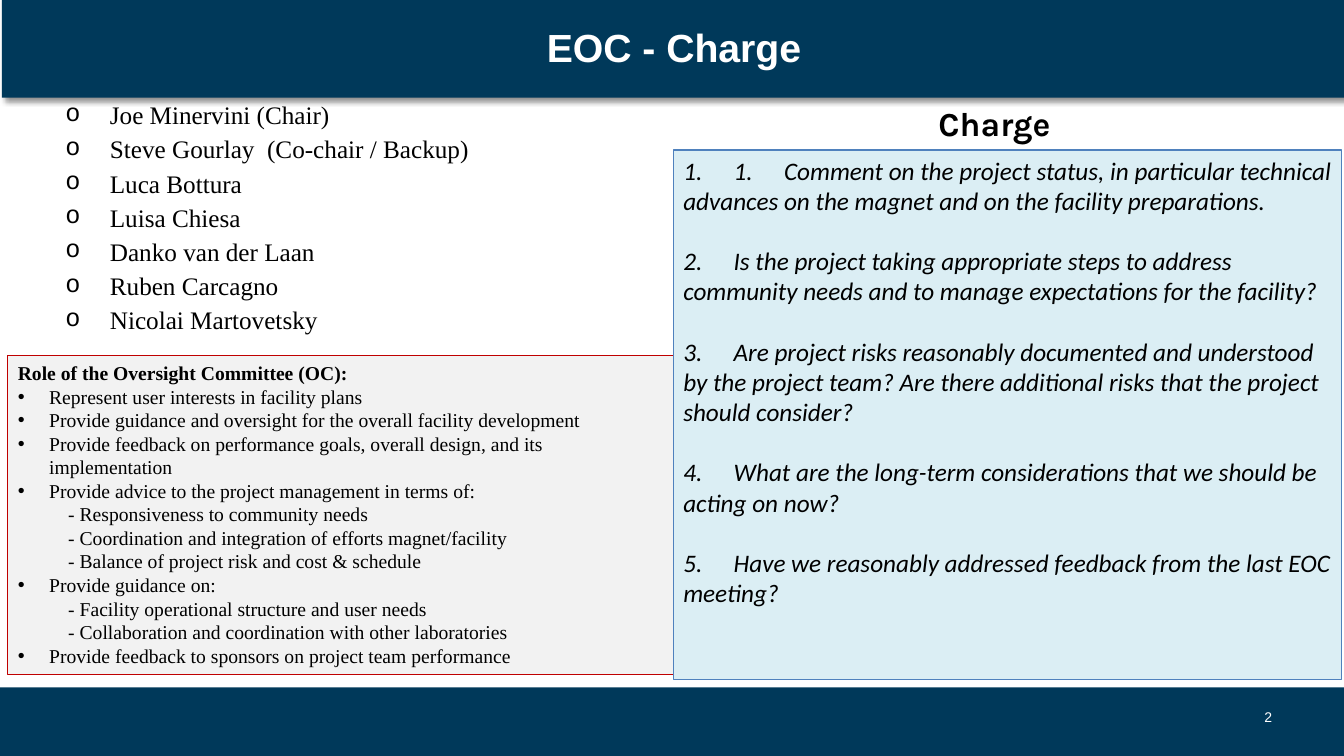
from dataclasses import dataclass

from lxml import etree
from pptx import Presentation
from pptx.dml.color import RGBColor
from pptx.enum.shapes import MSO_SHAPE
from pptx.enum.text import MSO_ANCHOR, MSO_AUTO_SIZE, PP_ALIGN
from pptx.oxml.ns import qn
from pptx.util import Cm, Pt

RECTANGLE = MSO_SHAPE.RECTANGLE
TOP, MIDDLE = MSO_ANCHOR.TOP, MSO_ANCHOR.MIDDLE
LEFT, CENTER, RIGHT = PP_ALIGN.LEFT, PP_ALIGN.CENTER, PP_ALIGN.RIGHT
TITLE_ONLY = 5


@dataclass(frozen=True)
class Style:
    font: str
    size: float
    color: str = "000000"
    bold: bool = False
    italic: bool = False
    leading: float = 0


@dataclass(frozen=True)
class Theme:
    navy: str = "00395A"
    role_fill: str = "F2F2F2"
    role_line: str = "C00000"
    charge_fill: str = "DBEEF4"
    charge_line: str = "4F81BD"
    title: Style = Style("Arial", 28, "FFFFFF", bold=True)
    member: Style = Style("Times New Roman", 18, leading=19.4)
    role_heading: Style = Style("Times New Roman", 14, bold=True, leading=16.8)
    role: Style = Style("Times New Roman", 14, leading=16.8)
    heading: Style = Style("Karla", 24, bold=True)
    charge: Style = Style("Calibri", 18, italic=True, leading=21.55)
    number: Style = Style("Arial", 10, "FFFFFF")


THEME = Theme()

MEMBERS = [
    "Joe Minervini (Chair)",
    "Steve Gourlay  (Co-chair / Backup)",
    "Luca Bottura",
    "Luisa Chiesa",
    "Danko van der Laan",
    "Ruben Carcagno",
    "Nicolai Martovetsky",
]
ROLE_HEADING = "Role of the Oversight Committee (OC):"
ROLES = [
    ("Represent user interests in facility plans", []),
    ("Provide guidance and oversight for the overall facility development", []),
    ("Provide feedback on performance goals, overall design, and its implementation", []),
    ("Provide advice to the project management in terms of:", [
        "Responsiveness to community needs",
        "Coordination and integration of efforts magnet/facility",
        "Balance of project risk and cost & schedule",
    ]),
    ("Provide guidance on:", [
        "Facility operational structure and user needs",
        "Collaboration and coordination with other laboratories",
    ]),
    ("Provide feedback to sponsors on project team performance", []),
]
CHARGES = [
    "1.\t1.\tComment on the project status, in particular technical advances "
    "on the magnet and on the facility preparations.",
    "2.\tIs the project taking appropriate steps to address community needs "
    "and to manage expectations for the facility?",
    "3.\tAre project risks reasonably documented and understood by the project "
    "team? Are there additional risks that the project should consider?",
    "4.\tWhat are the long-term considerations that we should be acting on now?",
    "5.\tHave we reasonably addressed feedback from the last EOC meeting?",
]


def place(shape, left, top, width, height):
    shape.left, shape.top = Cm(left), Cm(top)
    shape.width, shape.height = Cm(width), Cm(height)


def paint(shape, fill, line=None, line_width=1):
    shape.fill.solid()
    shape.fill.fore_color.rgb = RGBColor.from_string(fill)
    if line:
        shape.line.color.rgb = RGBColor.from_string(line)
        shape.line.width = Pt(line_width)
    else:
        shape.line.fill.background()


def prepare_frame(shape, anchor=TOP, side=0.13, wrap=True):
    frame = shape.text_frame
    frame.auto_size = MSO_AUTO_SIZE.NONE
    frame.word_wrap = wrap
    frame.vertical_anchor = anchor
    frame.margin_left = frame.margin_right = Cm(side)
    frame.margin_top = frame.margin_bottom = Cm(0.13)
    return frame


def add_panel(page, bounds, fill, line=None, line_width=1):
    panel = page.shapes.add_shape(RECTANGLE, *map(Cm, bounds))
    panel.shadow.inherit = False
    paint(panel, fill, line, line_width)
    return prepare_frame(panel, side=0.25)


def add_text_box(page, bounds, anchor=TOP, wrap=True):
    box = page.shapes.add_textbox(*map(Cm, bounds))
    return prepare_frame(box, anchor, wrap=wrap)


def add_para(frame, text, style, align=LEFT, before=0, bullet=None,
             margin=0, hanging=0, tabs=()):
    """Write into the empty first paragraph, or append one with space before."""
    first = frame.paragraphs[0]
    is_first = not first.text
    para = first if is_first else frame.add_paragraph()
    para.text = text
    para.alignment = align
    properties = para._p.get_or_add_pPr()
    properties.set("marL", str(Cm(margin)))
    properties.set("indent", str(-Cm(hanging)))
    if bullet:
        mark, mark_font = bullet
        etree.SubElement(properties, qn("a:buFont"), typeface=mark_font)
        etree.SubElement(properties, qn("a:buChar"), char=mark)
    if tabs:
        stops = etree.SubElement(properties, qn("a:tabLst"))
        for stop in tabs:
            etree.SubElement(stops, qn("a:tab"), pos=str(Cm(stop)), algn="l")
    para.space_before = Pt(0 if is_first else before)
    if style.leading:
        para.line_spacing = Pt(style.leading)
    font = para.font
    font.name, font.size = style.font, Pt(style.size)
    font.bold, font.italic = style.bold, style.italic
    font.color.rgb = RGBColor.from_string(style.color)


def add_drop_shadow(shape):
    effects = etree.SubElement(shape._element.spPr, qn("a:effectLst"))
    shadow = etree.SubElement(effects, qn("a:outerShdw"), blurRad=str(Pt(4)),
                              dist=str(Pt(3)), dir="2700000", rotWithShape="0")
    color = etree.SubElement(shadow, qn("a:srgbClr"), val="000000")
    etree.SubElement(color, qn("a:alpha"), val="43000")


def format_title(page, text):
    title = page.shapes.title
    place(title, 0.05, -0.08, 33.87, 2.54)
    paint(title, THEME.navy)
    add_drop_shadow(title)
    add_para(prepare_frame(title, MIDDLE), text, THEME.title, CENTER)


def add_members(page):
    frame = add_text_box(page, (0.25, 2.46, 19.53, 6.48))
    for member in MEMBERS:
        add_para(frame, member, THEME.member, before=5,
                 bullet=("o", "Courier New"), margin=2.39, hanging=1.12)


def add_roles(page):
    frame = add_panel(page, (0.2, 8.97, 16.84, 8.03),
                      THEME.role_fill, THEME.role_line, 0.75)
    add_para(frame, ROLE_HEADING, THEME.role_heading)
    for role, details in ROLES:
        add_para(frame, role, THEME.role, bullet=("•", "Arial"),
                 margin=0.79, hanging=0.79)
        for detail in details:
            add_para(frame, f"- {detail}", THEME.role, margin=1.27)


def add_charges(page):
    frame = add_panel(page, (16.97, 3.78, 16.84, 13.34),
                      THEME.charge_fill, THEME.charge_line)
    for charge in CHARGES:
        add_para(frame, charge, THEME.charge, before=THEME.charge.leading,
                 tabs=(1.27, 2.54))
    heading = add_text_box(page, (23.52, 2.46, 4.67, 1.27))
    add_para(heading, "Charge", THEME.heading)


def main():
    deck = Presentation()
    deck.slide_width, deck.slide_height = Cm(33.87), Cm(19.05)
    page = deck.slides.add_slide(deck.slide_layouts[TITLE_ONLY])
    format_title(page, "EOC - Charge")
    add_panel(page, (0, 17.32, 33.87, 1.73), THEME.navy)
    add_members(page)
    add_roles(page)
    add_charges(page)
    number = add_text_box(page, (31.5, 17.75, 0.69, 0.64), MIDDLE, wrap=False)
    add_para(number, "2", THEME.number, RIGHT)
    deck.save("out.pptx")


if __name__ == "__main__":
    main()
